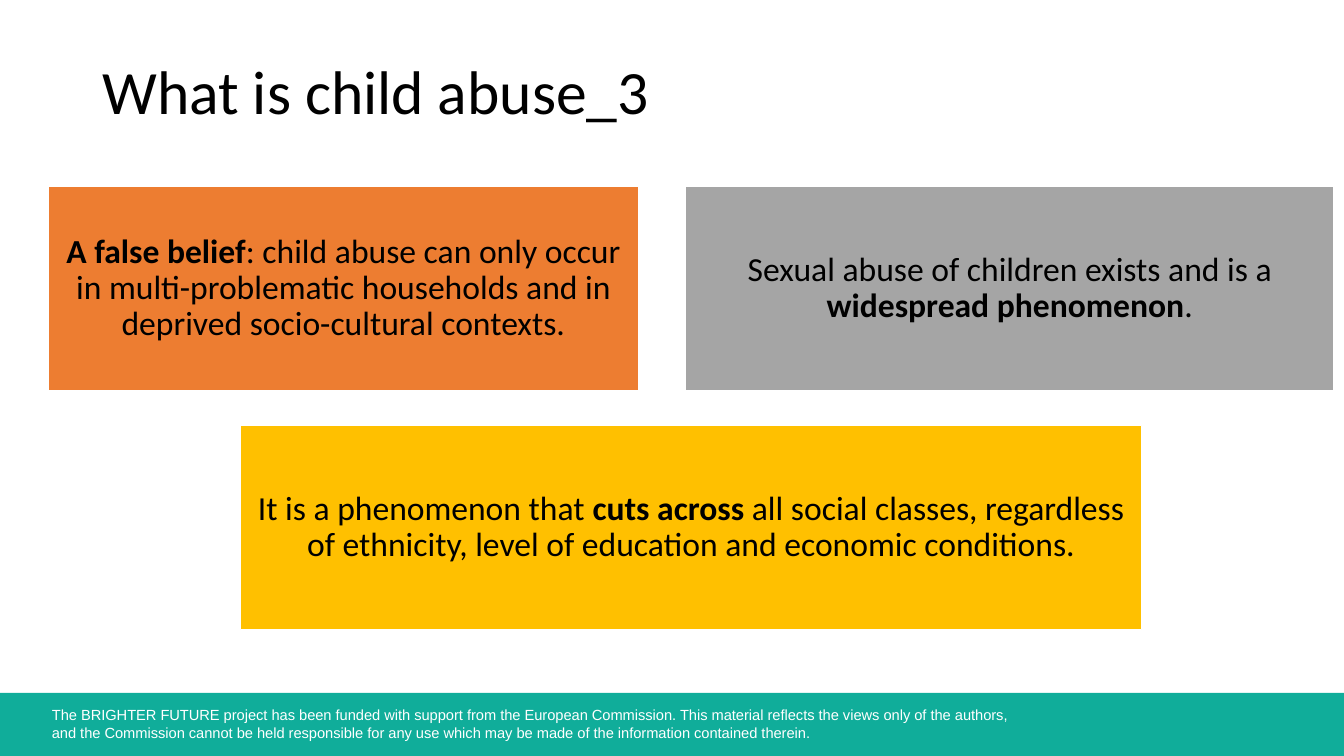
from pptx import Presentation
from pptx.dml.color import RGBColor
from pptx.enum.shapes import MSO_SHAPE
from pptx.enum.text import MSO_ANCHOR, PP_ALIGN
from pptx.util import Pt

RECTANGLE = MSO_SHAPE.RECTANGLE
MIDDLE = MSO_ANCHOR.MIDDLE
LEFT, CENTER = PP_ALIGN.LEFT, PP_ALIGN.CENTER


def color(hex_code):
    return RGBColor.from_string(hex_code)


def add_run(paragraph, text, size, font="Calibri", hex_code="000000", bold=False):
    run = paragraph.add_run()
    run.text = text
    run.font.size = Pt(size)
    run.font.name = font
    run.font.bold = bold
    run.font.color.rgb = color(hex_code)


prs = Presentation()
prs.slide_width, prs.slide_height = Pt(960), Pt(540)
slide = prs.slides.add_slide(prs.slide_layouts[5])

# Footer band with the funding notice
band = slide.shapes.add_shape(RECTANGLE, Pt(0), Pt(495), Pt(960), Pt(45))
band.shadow.inherit = False
band.fill.solid()
band.fill.fore_color.rgb = color("10AD9A")
band.line.fill.background()

notice = slide.shapes.add_textbox(Pt(30), Pt(501), Pt(720), Pt(32.6)).text_frame
notice.word_wrap = True
notice_lines = [
    "The BRIGHTER FUTURE project has been funded with support from the European Commission. "
    "This material reflects the views only of the authors,",
    "and the Commission cannot be held responsible for any use which may be made of the "
    "information contained therein.",
]
for index, line in enumerate(notice_lines):
    if index:
        notice.paragraphs[0].add_line_break()
    add_run(notice.paragraphs[0], line, 10.5, "Arial", "FFFFFF")

# Statement cards: left, top, width, fill, runs as (text, bold)
CARD_HEIGHT = 146
cards = [
    (34.7, 133.2, 421.2, "ED7D31", [
        ("A false belief", True),
        (": child abuse can only occur in multi-problematic households and in "
         "deprived socio-cultural contexts.", False)]),
    (489.6, 133.2, 463.4, "A5A5A5", [
        ("Sexual abuse of children exists and is a ", False),
        ("widespread phenomenon", True),
        (".", False)]),
    (171.8, 303.8, 643.7, "FFC000", [
        ("It is a phenomenon that ", False),
        ("cuts across ", True),
        ("all social classes, regardless of ethnicity, level of education and "
         "economic conditions.", False)]),
]
for left, top, width, fill, statement in cards:
    card = slide.shapes.add_shape(RECTANGLE, Pt(left), Pt(top), Pt(width), Pt(CARD_HEIGHT))
    card.shadow.inherit = False
    card.fill.solid()
    card.fill.fore_color.rgb = color(fill)
    card.line.color.rgb = color("FFFFFF")
    card.line.width = Pt(1)
    frame = card.text_frame
    frame.word_wrap = True
    frame.vertical_anchor = MIDDLE
    frame.margin_left = frame.margin_right = Pt(8.64)
    frame.margin_top = frame.margin_bottom = Pt(8.64)
    paragraph = frame.paragraphs[0]
    paragraph.alignment = CENTER
    paragraph.line_spacing = 0.9
    for text, bold in statement:
        add_run(paragraph, text, 24, bold=bold)

# Title
title = slide.shapes.title
title.left, title.top, title.width, title.height = Pt(66), Pt(26), Pt(828), Pt(83)
title.text_frame.vertical_anchor = MIDDLE
heading = title.text_frame.paragraphs[0]
heading.alignment = LEFT
heading.line_spacing = 0.9
add_run(heading, "What is child abuse_3", 44)

prs.save("out.pptx")
